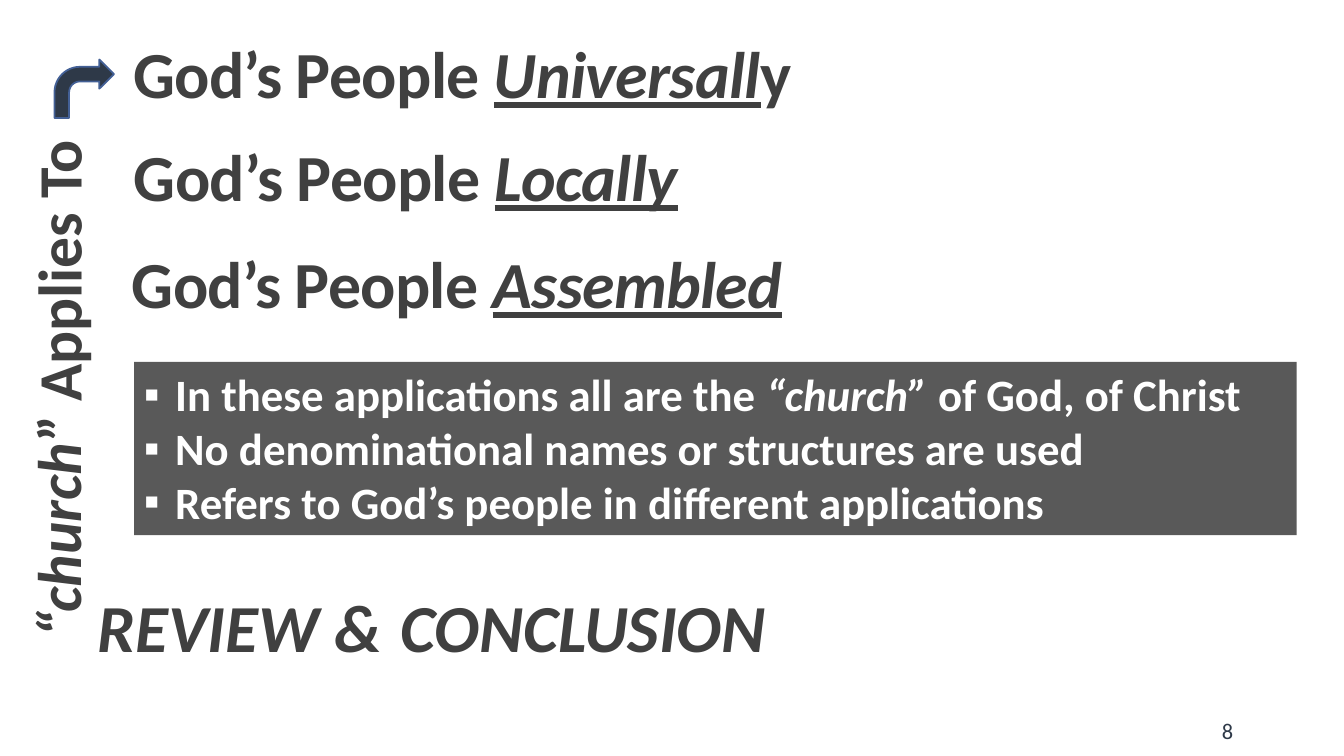
from lxml import etree
from pptx import Presentation
from pptx.dml.color import RGBColor
from pptx.enum.shapes import MSO_SHAPE
from pptx.enum.text import MSO_ANCHOR, PP_ALIGN
from pptx.oxml.ns import qn
from pptx.util import Inches, Pt

LEFT, CENTER = PP_ALIGN.LEFT, PP_ALIGN.CENTER
TOP, MIDDLE, BOTTOM = MSO_ANCHOR.TOP, MSO_ANCHOR.MIDDLE, MSO_ANCHOR.BOTTOM
RECTANGLE, BENT_ARROW = MSO_SHAPE.RECTANGLE, MSO_SHAPE.BENT_ARROW
TITLE_ONLY = 5

FONT = "Calibri"
DARK, NAVY, BLUE, GRAY, WHITE = "404040", "2E3948", "436096", "595959", "FFFFFF"

PEOPLE = "God’s People "
CHURCH_POINTS = [
    [("In these applications all are the ", ""), ("“church” ", "i"),
     ("of God, of Christ", "")],
    [("No denominational names or structures are used", "")],
    [("Refers to God’s people in different applications", "")],
]


def rgb(hex_color):
    return RGBColor.from_string(hex_color)


def place(sp, left, top, width, height):
    sp.left, sp.top = Inches(left), Inches(top)
    sp.width, sp.height = Inches(width), Inches(height)


def add_bullet(p, char, indent):
    pPr = p._p.get_or_add_pPr()
    pPr.set("marL", str(Inches(indent)))
    pPr.set("indent", str(-Inches(indent)))
    etree.SubElement(pPr, qn("a:buFont")).set("typeface", "Arial")
    etree.SubElement(pPr, qn("a:buChar")).set("char", char)


def write_text(sp, paragraphs, size, color=DARK, bold=True, align=LEFT, anchor=TOP,
               wrap=True, line_spacing=None, tracking=None, bullet=None):
    """Fill sp with paragraphs of (text, style) runs; style holds i and u flags."""
    tf = sp.text_frame
    tf.word_wrap = wrap
    tf.vertical_anchor = anchor
    for i, runs in enumerate(paragraphs):
        p = tf.add_paragraph() if i else tf.paragraphs[0]
        p.alignment = align
        if line_spacing:
            p.line_spacing = line_spacing
        if bullet:
            add_bullet(p, bullet, 0.31)
        for text, style in runs:
            r = p.add_run()
            r.text = text
            font = r.font
            font.name, font.size, font.bold = FONT, Pt(size), bold
            font.italic, font.underline = "i" in style, "u" in style
            font.color.rgb = rgb(color)
            if tracking:
                r._r.get_or_add_rPr().set("spc", str(int(tracking * 100)))


def add_text(s, box, runs, size, rotation=0, **text_format):
    sp = s.shapes.add_textbox(*map(Inches, box))
    sp.rotation = rotation
    write_text(sp, [runs], size, **text_format)


def add_shape(s, kind, box, fill, line=None):
    sp = s.shapes.add_shape(kind, *map(Inches, box))
    sp.shadow.inherit = False
    sp.fill.solid()
    sp.fill.fore_color.rgb = rgb(fill)
    if line:
        sp.line.color.rgb = rgb(line)
        sp.line.width = Pt(1.25)
    else:
        sp.line.fill.background()
    return sp


def main():
    prs = Presentation()
    prs.slide_width, prs.slide_height = Inches(13.33), Inches(7.5)
    s = prs.slides.add_slide(prs.slide_layouts[TITLE_ONLY])

    heading = dict(size=47, anchor=BOTTOM, line_spacing=0.9, tracking=-0.5)
    place(s.shapes.title, 1.22, 0.31, 10.98, 0.86)
    write_text(s.shapes.title,
               [[(PEOPLE, ""), ("Universall", "iu"), ("y", "")]], **heading)
    for left, top, scope in [(1.23, 1.33, "Locally"), (1.21, 2.39, "Assembled")]:
        add_text(s, (left, top, 10.98, 0.86), [(PEOPLE, ""), (scope, "iu")], **heading)

    add_text(s, (-2.21, 3.37, 5.56, 0.84), [("“church", "i"), ("” Applies To ", "")],
             44, rotation=270, align=CENTER, wrap=False)
    add_shape(s, BENT_ARROW, (0.54, 0.59, 0.59, 0.58), NAVY, BLUE)

    add_text(s, (0.84, 5.76, 7.04, 0.91), [("REVIEW & \tCONCLUSION ", "i")],
             48, align=CENTER, wrap=False)
    panel = add_shape(s, RECTANGLE, (1.33, 3.59, 11.53, 1.72), GRAY)
    write_text(panel, CHURCH_POINTS, 32, color=WHITE, bullet="▪")

    add_text(s, (12.02, 7.05, 0.85, 0.4), [("8", "")], 16, color=NAVY, bold=False,
             anchor=MIDDLE)
    prs.save("out.pptx")


if __name__ == "__main__":
    main()
